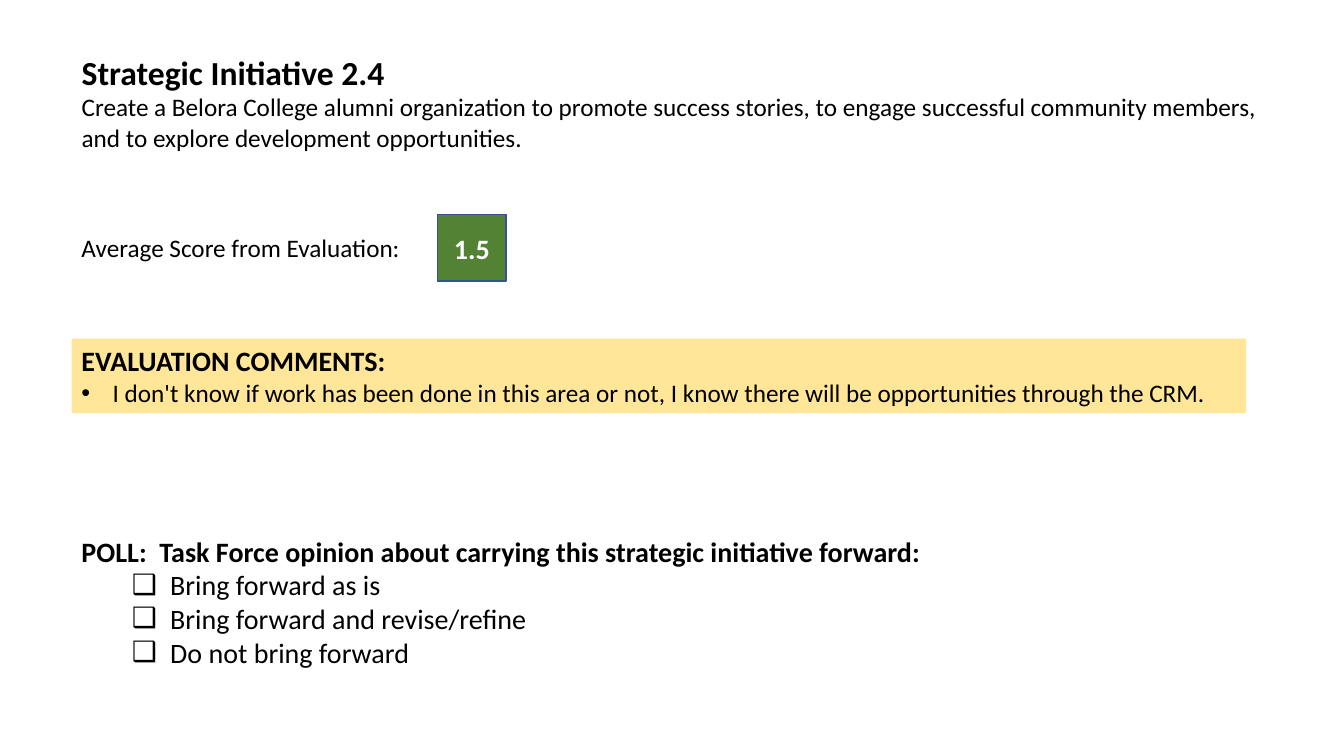
from lxml import etree
from pptx import Presentation
from pptx.dml.color import RGBColor
from pptx.enum.shapes import MSO_SHAPE
from pptx.enum.text import MSO_ANCHOR, MSO_AUTO_SIZE, PP_ALIGN
from pptx.oxml.ns import qn
from pptx.util import Inches, Pt

RECTANGLE = MSO_SHAPE.RECTANGLE
TOP, MIDDLE = MSO_ANCHOR.TOP, MSO_ANCHOR.MIDDLE
LEFT, CENTER = PP_ALIGN.LEFT, PP_ALIGN.CENTER
NO_AUTOFIT = MSO_AUTO_SIZE.NONE

BLACK = RGBColor(0x00, 0x00, 0x00)
WHITE = RGBColor(0xFF, 0xFF, 0xFF)
GREEN = RGBColor(0x54, 0x82, 0x35)
BLUE = RGBColor(0x32, 0x54, 0x91)
YELLOW = RGBColor(0xFF, 0xE6, 0x99)
FONT = "Calibri"
BULLET_FONT = "Arial"

# Content: (text, size, bold) for each paragraph
INITIATIVE = [
    ("Strategic Initiative 2.4", 24, True),
    ("Create a Belora College alumni organization to promote success stories, "
     "to engage successful community members, and to explore development "
     "opportunities.", 18, False),
]
SCORE_LABEL = [("Average Score from Evaluation:", 18, False)]
SCORE = [("1.5", 20, True)]
COMMENTS = [
    ("EVALUATION COMMENTS:", 20, True),
    ("I don't know if work has been done in this area or not, I know there "
     "will be opportunities through the CRM.", 18, False),
]
POLL = [
    ("POLL:  Task Force opinion about carrying this strategic initiative forward:", 20, True),
    ("Bring forward as is", 20, False),
    ("Bring forward and revise/refine", 20, False),
    ("Do not bring forward", 20, False),
]

# Layout in inches
MARGIN = 0.71
BODY_WIDTH = 11.65


def write(shape, lines, color=BLACK, align=LEFT, anchor=TOP, wrap=True):
    frame = shape.text_frame
    frame.text = "\n".join(text for text, _, _ in lines)
    frame.auto_size = NO_AUTOFIT
    frame.word_wrap = wrap
    frame.vertical_anchor = anchor
    frame.margin_left = frame.margin_right = Inches(0.1)
    frame.margin_top = frame.margin_bottom = Inches(0.05)
    for paragraph, (_, size, bold) in zip(frame.paragraphs, lines):
        paragraph.alignment = align
        paragraph.line_spacing = 1.0
        paragraph.space_before = Pt(0)
        font = paragraph.runs[0].font
        font.name, font.size, font.bold = FONT, Pt(size), bold
        font.color.rgb = color


def add_bullets(shape, symbol, margin, hanging, level=0):
    """Bullet every paragraph below the heading."""
    for paragraph in shape.text_frame.paragraphs[1:]:
        paragraph.level = level
        properties = paragraph._p.get_or_add_pPr()
        properties.set("marL", str(Inches(margin)))
        properties.set("indent", str(-Inches(hanging)))
        etree.SubElement(properties, qn("a:buFont")).set("typeface", BULLET_FONT)
        etree.SubElement(properties, qn("a:buChar")).set("char", symbol)


def add_text(slide, top, width, height, lines, wrap=True):
    box = slide.shapes.add_textbox(
        Inches(MARGIN), Inches(top), Inches(width), Inches(height))
    write(box, lines, wrap=wrap)
    return box


def main():
    deck = Presentation()
    deck.slide_width, deck.slide_height = Inches(13.33), Inches(7.5)
    slide = deck.slides.add_slide(deck.slide_layouts[5])

    # Initiative heading and description
    initiative = slide.shapes.title
    initiative.left, initiative.top = Inches(MARGIN), Inches(0.46)
    initiative.width, initiative.height = Inches(11.87), Inches(1.11)
    write(initiative, INITIATIVE)

    # Average score
    add_text(slide, 2.26, 3.51, 0.4, SCORE_LABEL, wrap=False)
    score = slide.shapes.add_shape(
        RECTANGLE, Inches(4.34), Inches(2.13), Inches(0.68), Inches(0.66))
    score.shadow.inherit = False
    score.fill.solid()
    score.fill.fore_color.rgb = GREEN
    score.line.color.rgb = BLUE
    score.line.width = Pt(1)
    write(score, SCORE, WHITE, CENTER, MIDDLE)

    # Poll
    poll = add_text(slide, 5.25, BODY_WIDTH, 1.45, POLL)
    add_bullets(poll, "❑", 0.88, 0.38, level=1)

    # Evaluation comments
    comments = add_text(slide, 3.36, BODY_WIDTH, 0.74, COMMENTS)
    comments.fill.solid()
    comments.fill.fore_color.rgb = YELLOW
    add_bullets(comments, "•", 0.31, 0.31)

    deck.save("out.pptx")


if __name__ == "__main__":
    main()
